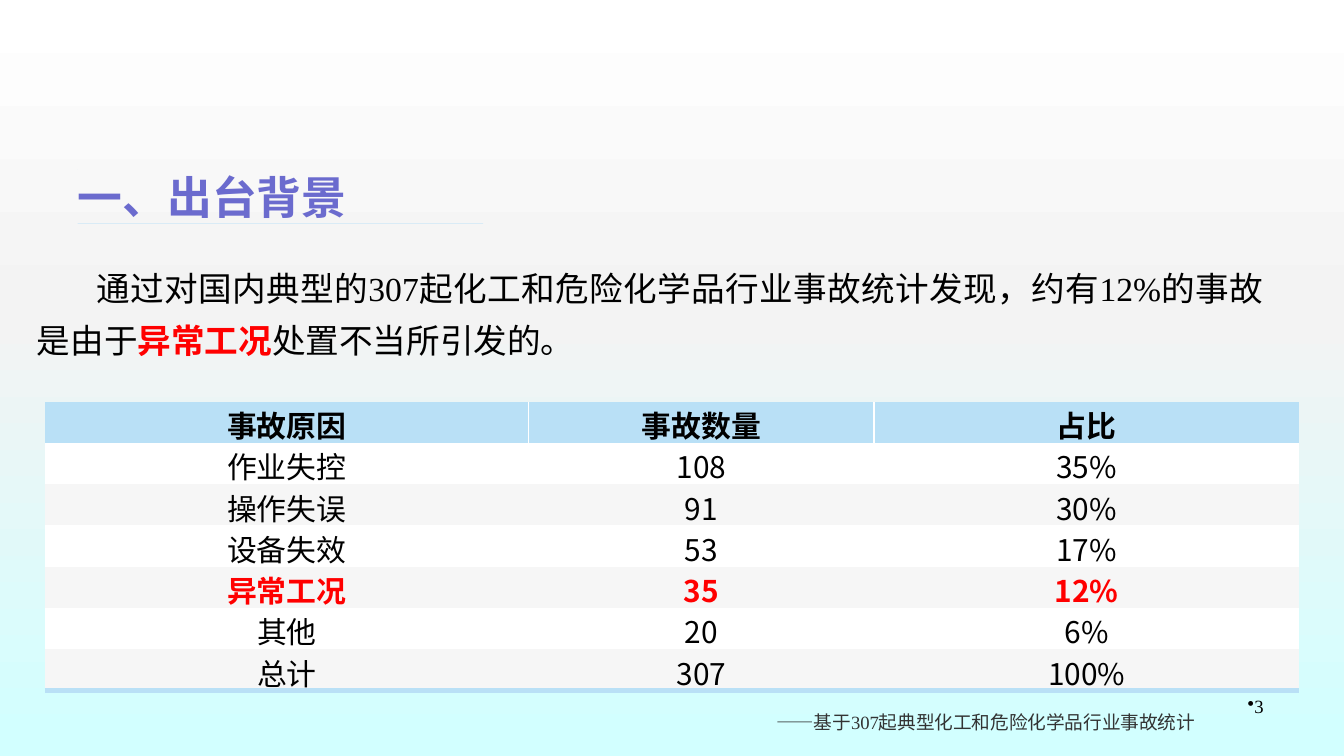
from copy import deepcopy

from lxml import etree
from pptx import Presentation
from pptx.dml.color import RGBColor
from pptx.enum.text import MSO_ANCHOR, MSO_AUTO_SIZE, PP_ALIGN
from pptx.oxml.ns import qn
from pptx.util import Cm, Pt

CENTER, LEFT, RIGHT, JUSTIFY = PP_ALIGN.CENTER, PP_ALIGN.LEFT, PP_ALIGN.RIGHT, PP_ALIGN.JUSTIFY
MIDDLE, BOTTOM = MSO_ANCHOR.MIDDLE, MSO_ANCHOR.BOTTOM
NO_AUTO_SIZE = MSO_AUTO_SIZE.NONE

TITLE_ONLY = 5
PLAIN_TABLE_STYLE = "{2D5ABB26-0587-4C30-8999-92F81FD0307C}"
SERIF = "Times New Roman"
SANS = "Noto Sans CJK SC"

COLORS = {
    "black": "000000",
    "white": "FFFFFF",
    "red": "FF0000",
    "title": "6B6BCE",
    "rule": "19A9FF",
    "source": "333333",
    "header": "B9E0F6",
    "band": "F6F6F6",
}
BACKGROUND_STOPS = [(0, "FFFFFF"), (0.42, "F3F3F3"), (0.98, "D2FFFF")]

TITLE_LEFT, TITLE_TOP, TITLE_WIDTH, TITLE_HEIGHT = Cm(1.47), Cm(3.2), Cm(7.66), Cm(1.02)

CAUSES = [
    ("事故原因", "事故数量", "占比"),
    ("作业失控", "108", "35%"),
    ("操作失误", "91", "30%"),
    ("设备失效", "53", "17%"),
    ("异常工况", "35", "12%"),
    ("其他", "20", "6%"),
    ("总计", "307", "100%"),
]
HIGHLIGHTED_CAUSE = "异常工况"
COLUMN_WIDTHS = [9.14, 6.53, 8.03]
ROW_HEIGHT = 0.78


def rgb(name):
    return RGBColor.from_string(COLORS[name])


def set_font(font, name, size, color, bold=False):
    font.name = name
    font.size = Pt(size)
    font.bold = bold
    font.color.rgb = rgb(color)


def set_background(slide):
    fill = slide.background.fill
    fill.gradient()
    fill.gradient_angle = 270
    stop_list = next(slide.element.iter(qn("a:gsLst")))
    stop_list.append(deepcopy(stop_list[-1]))
    for stop, (position, color) in zip(fill.gradient_stops, BACKGROUND_STOPS):
        stop.position = position
        stop.color.rgb = RGBColor.from_string(color)


def add_title(slide, text):
    title = slide.shapes.title
    title.left, title.top = TITLE_LEFT, TITLE_TOP
    title.width, title.height = TITLE_WIDTH, TITLE_HEIGHT
    frame = title.text_frame
    frame.text = text
    frame.auto_size = NO_AUTO_SIZE
    frame.vertical_anchor = MIDDLE
    frame.margin_left = frame.margin_right = frame.margin_top = frame.margin_bottom = 0
    paragraph = frame.paragraphs[0]
    paragraph.alignment = LEFT
    set_font(paragraph.font, SERIF, 24, "title", bold=True)


def add_title_rule(slide):
    """Add a hairline outline along the foot of the title area."""
    right, bottom = TITLE_LEFT + TITLE_WIDTH, TITLE_TOP + TITLE_HEIGHT
    builder = slide.shapes.build_freeform(TITLE_LEFT, bottom)
    builder.add_line_segments([(right, bottom)], close=True)
    builder.move_to(TITLE_LEFT, TITLE_TOP)
    builder.add_line_segments([(TITLE_LEFT, TITLE_TOP)], close=True)
    rule = builder.convert_to_shape()
    rule.shadow.inherit = False
    rule.fill.solid()
    rule.fill.fore_color.rgb = rgb("rule")
    rule.line.fill.background()


def add_text(slide, left, top, width, height, alignment):
    """Add a wrapping text box and return its first paragraph."""
    box = slide.shapes.add_textbox(Cm(left), Cm(top), Cm(width), Cm(height))
    box.text_frame.word_wrap = True
    paragraph = box.text_frame.paragraphs[0]
    paragraph.alignment = alignment
    return paragraph


def add_finding(slide):
    paragraph = add_text(slide, 0.45, 4.71, 23.67, 2.16, JUSTIFY)
    paragraph.line_spacing = Pt(28)
    paragraph._p.get_or_add_pPr().set("indent", str(Cm(1.12)))
    set_font(paragraph.font, SERIF, 18, "black")
    parts = [
        "通过对国内典型的307起化工和危险化学品行业事故统计发现，约有12%的事故是由于",
        HIGHLIGHTED_CAUSE,
        "处置不当所引发的。",
    ]
    for text in parts:
        run = paragraph.add_run()
        run.text = text
        highlighted = text == HIGHLIGHTED_CAUSE
        set_font(run.font, SERIF, 18, "red" if highlighted else "black", highlighted)


def add_border(cell, side, color, points):
    """Draw one cell edge; side is L, R, T or B, added in that order."""
    line = etree.SubElement(cell._tc.get_or_add_tcPr(), qn(f"a:ln{side}"), w=str(Pt(points)))
    fill = etree.SubElement(line, qn("a:solidFill"))
    etree.SubElement(fill, qn("a:srgbClr"), val=COLORS[color])


def format_cell(cell, text, fill, anchor, color, bold):
    cell.text = text
    cell.vertical_anchor = anchor
    cell.margin_left = cell.margin_right = cell.margin_top = Cm(0.03)
    cell.margin_bottom = 0
    cell.fill.solid()
    cell.fill.fore_color.rgb = rgb(fill)
    paragraph = cell.text_frame.paragraphs[0]
    paragraph.alignment = CENTER
    set_font(paragraph.font, SANS, 16, color, bold)


def add_cause_table(slide):
    last_row, last_column = len(CAUSES) - 1, len(COLUMN_WIDTHS) - 1
    frame = slide.shapes.add_table(
        len(CAUSES), len(COLUMN_WIDTHS), Cm(0.85), Cm(7.59),
        Cm(sum(COLUMN_WIDTHS)), Cm(ROW_HEIGHT * len(CAUSES)),
    )
    table = frame.table
    table.horz_banding = False
    table._tbl.tblPr.find(qn("a:tableStyleId")).text = PLAIN_TABLE_STYLE
    for column, width in zip(table.columns, COLUMN_WIDTHS):
        column.width = Cm(width)
    for row_index, values in enumerate(CAUSES):
        table.rows[row_index].height = Cm(ROW_HEIGHT)
        header = row_index == 0
        highlighted = values[0] == HIGHLIGHTED_CAUSE
        fill = "header" if header else "white" if row_index % 2 else "band"
        for column_index, text in enumerate(values):
            cell = table.cell(row_index, column_index)
            if header and column_index > 0:
                add_border(cell, "L", "white", 1)
            if header and column_index < last_column:
                add_border(cell, "R", "white", 1)
            if row_index == last_row:
                add_border(cell, "B", "header", 3)
            format_cell(cell, text, fill, BOTTOM if header else MIDDLE,
                        "red" if highlighted else "black", header or highlighted)


def add_source_note(slide):
    paragraph = add_text(slide, 14.43, 13.1, 8.86, 0.81, LEFT)
    paragraph.text = "——基于307起典型化工和危险化学品行业事故统计"
    paragraph.line_spacing = 1.5
    set_font(paragraph.font, SERIF, 10, "source")


def add_page_number(slide):
    paragraph = add_text(slide, 18.21, 13.01, 5.92, 0.99, RIGHT)
    paragraph.text = "3"
    properties = paragraph._p.get_or_add_pPr()
    properties.set("marL", "0")
    properties.set("indent", "0")
    etree.SubElement(properties, qn("a:buChar"), char="•")
    set_font(paragraph.font, SERIF, 10, "black")


def main():
    presentation = Presentation()
    presentation.slide_width, presentation.slide_height = Cm(25.4), Cm(14.29)
    slide = presentation.slides.add_slide(presentation.slide_layouts[TITLE_ONLY])
    set_background(slide)
    add_page_number(slide)
    add_cause_table(slide)
    add_finding(slide)
    add_title(slide, "一、出台背景")
    add_title_rule(slide)
    add_source_note(slide)
    presentation.save("out.pptx")


if __name__ == "__main__":
    main()
